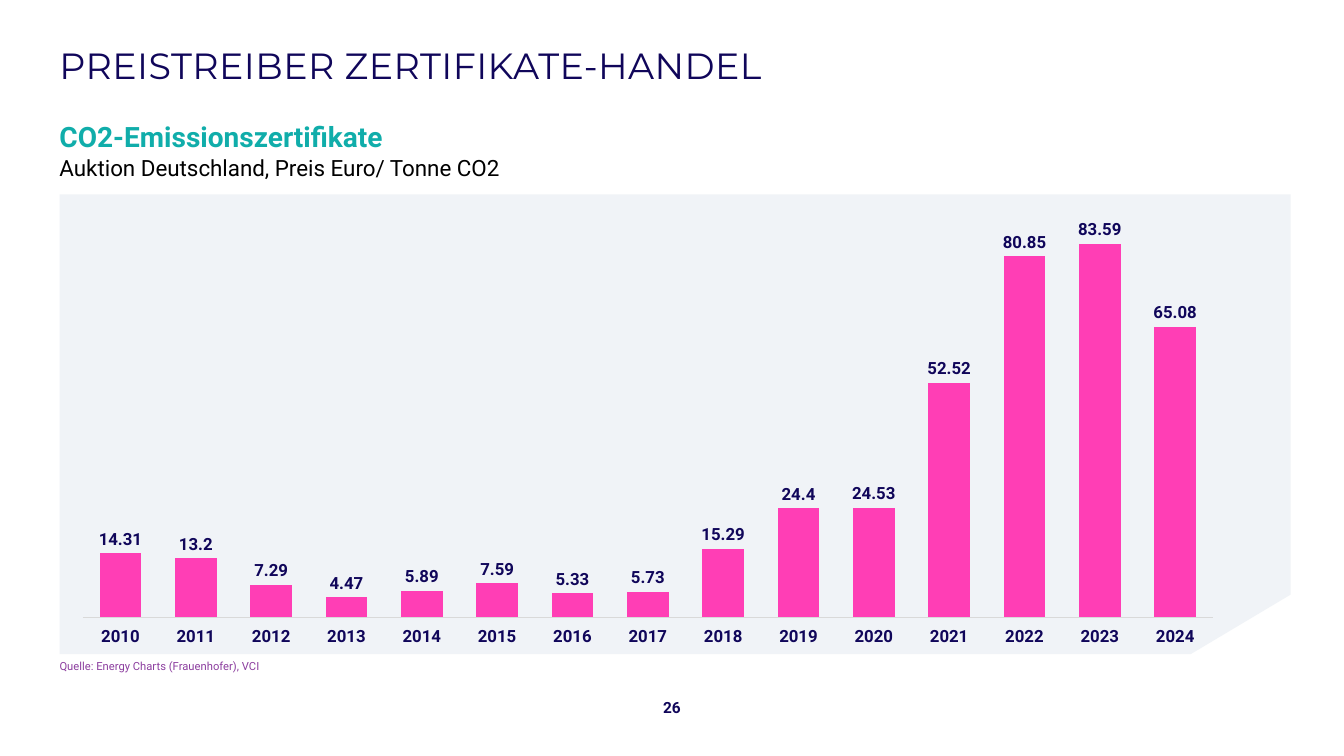
from lxml import etree
from pptx import Presentation
from pptx.chart.data import CategoryChartData
from pptx.dml.color import RGBColor
from pptx.enum.chart import XL_CHART_TYPE as Kind
from pptx.enum.chart import XL_LABEL_POSITION as Spot
from pptx.enum.chart import XL_TICK_LABEL_POSITION as Tag
from pptx.enum.chart import XL_TICK_MARK as Tick
from pptx.enum.text import MSO_ANCHOR as Anchor
from pptx.enum.text import PP_ALIGN as Align
from pptx.oxml.ns import qn
from pptx.util import Inches, Pt

COLORS = {
    "navy": "10065A", "teal": "10ADAA", "pink": "FF3EB5", "plum": "8C3E9F",
    "black": "000000", "panel": "F0F3F7", "rule": "D9D9D9",
}
LEFT, WIDTH = 0.59, 12.2
PRICES = [14.31, 13.2, 7.29, 4.47, 5.89, 7.59, 5.33, 5.73,
          15.29, 24.4, 24.53, 52.52, 80.85, 83.59, 65.08]


def color(name):
    return RGBColor.from_string(COLORS[name])


def style(font, size, tint, bold=False, face="Roboto"):
    font.name = face
    font.size = Pt(size)
    font.bold = bold
    font.color.rgb = color(tint)


def add_text(slide, box, text, size, tint, bold=False, face="Roboto",
             align=Align.LEFT, anchor=Anchor.TOP):
    frame = slide.shapes.add_textbox(*map(Inches, box)).text_frame
    frame.word_wrap = True
    frame.vertical_anchor = anchor
    frame.margin_left = frame.margin_right = 0
    frame.margin_top = frame.margin_bottom = 0
    line = frame.paragraphs[0]
    line.alignment = align
    run = line.add_run()
    run.text = text
    style(run.font, size, tint, bold, face)
    return run


def add_head(slide, box):
    left, top, width, _ = box
    title = add_text(slide, (left, top, width, 0.98),
                     "PREISTREIBER ZERTIFIKATE-HANDEL", 26, "navy",
                     face="Montserrat", anchor=Anchor.MIDDLE)
    title.font._element.set("spc", "30")
    add_text(slide, (left, top + 1.04, width, 0.31),
             "CO2-Emissionszertifikate", 20, "teal", bold=True)
    add_text(slide, (left, top + 1.38, width, 0.28),
             "Auktion Deutschland, Preis Euro/ Tonne CO2", 16, "black")


def add_panel(slide, box):
    left, top, width, height = box
    right, base = left + width, top + height
    points = [(right, top), (right, base - 0.59), (right - 0.99, base), (left, base)]
    form = slide.shapes.build_freeform(Inches(left), Inches(top))
    form.add_line_segments([(Inches(x), Inches(y)) for x, y in points], close=True)
    panel = form.convert_to_shape()
    panel.shadow.inherit = False
    panel.fill.solid()
    panel.fill.fore_color.rgb = color("panel")
    panel.line.fill.background()


def place_plot(chart, **parts):
    area = chart._chartSpace.chart.plotArea
    for old in area.findall(qn("c:layout")):
        area.remove(old)
    layout = etree.Element(qn("c:layout"))
    area.insert(0, layout)
    manual = etree.SubElement(layout, qn("c:manualLayout"))
    modes = {"layoutTarget": "inner", "xMode": "edge", "yMode": "edge"}
    for name, value in {**modes, **parts}.items():
        etree.SubElement(manual, qn("c:" + name)).set("val", str(value))


def add_bars(slide, box):
    data = CategoryChartData()
    data.categories = [str(year) for year in range(2010, 2025)]
    data.add_series("Series 1", PRICES)
    chart = slide.shapes.add_chart(Kind.COLUMN_CLUSTERED, *map(Inches, box), data).chart
    chart.has_legend = False
    chart.has_title = False
    style(chart.font, 12, "navy", bold=True)
    place_plot(chart, x=0.02, y=0.02, w=0.967, h=0.904)

    years = chart.category_axis
    years.major_tick_mark = years.minor_tick_mark = Tick.NONE
    years.tick_label_position = Tag.LOW
    years.format.line.color.rgb = color("rule")
    years.format.line.width = Pt(0.75)
    style(years.tick_labels.font, 12, "navy", bold=True)

    scale = chart.value_axis
    scale.visible = False
    scale.has_major_gridlines = False
    scale.minimum_scale, scale.maximum_scale = 0, 90

    plot = chart.plots[0]
    plot.vary_by_categories = False
    plot.gap_width, plot.overlap = 80, -27
    bars = plot.series[0]
    bars.format.fill.solid()
    bars.format.fill.fore_color.rgb = color("pink")
    labels = bars.data_labels
    labels.show_value = True
    labels.position = Spot.OUTSIDE_END
    style(labels.font, 12, "navy", bold=True)


def add_foot(slide, box):
    left, top, width, _ = box
    add_text(slide, (left, top, width, 0.13),
             "Quelle: Energy Charts (Frauenhofer), VCI", 8, "plum")
    add_text(slide, (left + 5.78, top + 0.34, 0.59, 0.28), "26", 11, "navy",
             bold=True, align=Align.CENTER, anchor=Anchor.MIDDLE)


def main():
    deck = Presentation()
    deck.slide_width, deck.slide_height = Inches(13.33), Inches(7.5)
    slide = deck.slides.add_slide(deck.slide_layouts[6])
    add_panel(slide, (LEFT, 1.93, 12.21, 4.56))
    add_head(slide, (LEFT, 0.15, WIDTH, 1.66))
    add_bars(slide, (LEFT, 2.05, 11.59, 4.41))
    add_foot(slide, (LEFT, 6.54, 11.02, 0.62))
    deck.save("out.pptx")


if __name__ == "__main__":
    main()
